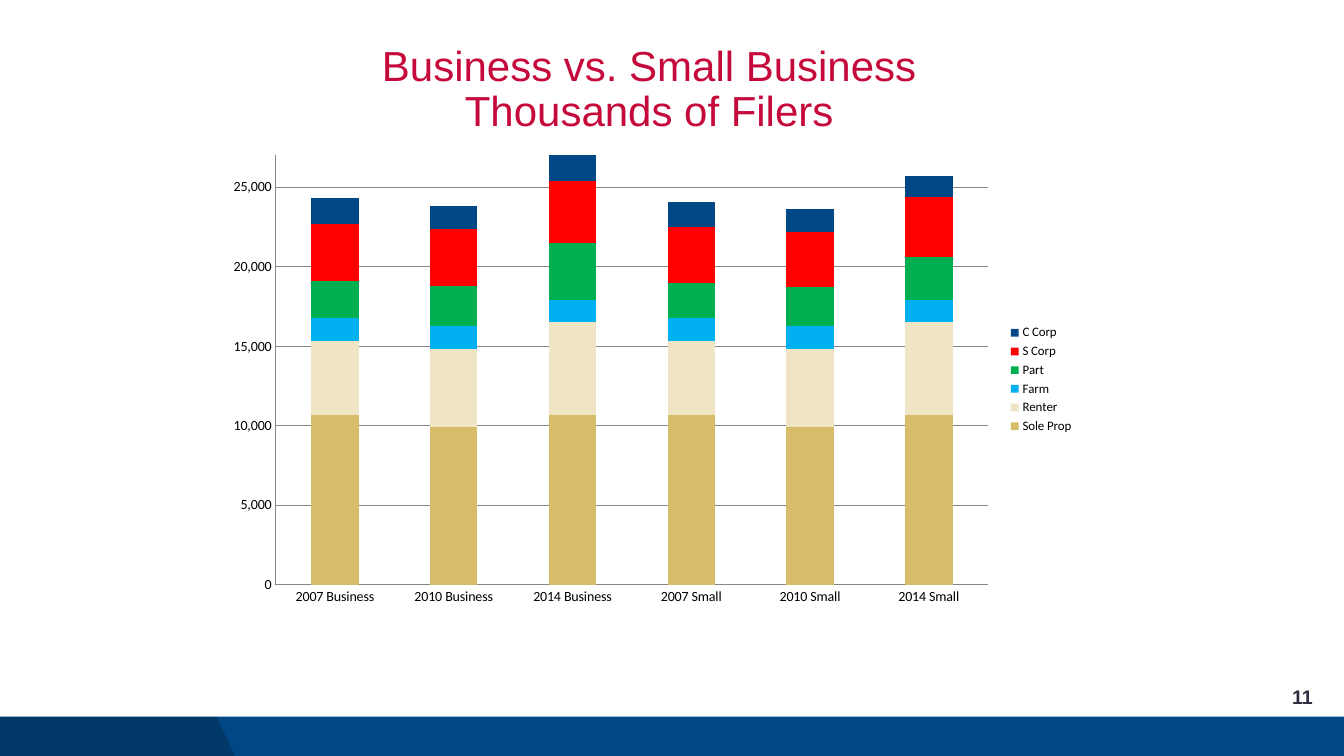
from dataclasses import dataclass

from lxml import etree
from pptx import Presentation
from pptx.chart.data import CategoryChartData
from pptx.dml.color import RGBColor
from pptx.enum.chart import XL_CHART_TYPE, XL_LEGEND_POSITION, XL_TICK_MARK
from pptx.enum.shapes import MSO_SHAPE
from pptx.enum.text import MSO_ANCHOR, MSO_AUTO_SIZE, PP_ALIGN
from pptx.oxml import parse_xml
from pptx.oxml.ns import nsdecls, qn
from pptx.util import Inches, Pt

STACKED = XL_CHART_TYPE.COLUMN_STACKED
RIGHT_LEGEND = XL_LEGEND_POSITION.RIGHT
NO_TICK = XL_TICK_MARK.NONE
RECT = MSO_SHAPE.RECTANGLE
TOP, MIDDLE = MSO_ANCHOR.TOP, MSO_ANCHOR.MIDDLE
NO_FIT = MSO_AUTO_SIZE.NONE
CENTER, RIGHT = PP_ALIGN.CENTER, PP_ALIGN.RIGHT


@dataclass(frozen=True)
class Theme:
    head: str = "Arial"
    body: str = "Calibri"
    red: str = "C5093B"
    navy: str = "004785"
    ink: str = "2D2C41"
    black: str = "000000"
    grid: str = "868686"
    title: float = 30
    number: float = 14
    label: float = 10
    legend: float = 9.2


THEME = Theme()
WIDTH, HEIGHT = 13.33, 7.5
GROUPS = ["2007 Business", "2010 Business", "2014 Business",
          "2007 Small", "2010 Small", "2014 Small"]
FILERS = [
    ("Sole Prop", "D7BC6A", [10700, 9900, 10700, 10700, 9900, 10700]),
    ("Renter", "EFE4C3", [4600, 4900, 5800, 4600, 4900, 5800]),
    ("Farm", "00B0F0", [1500, 1500, 1400, 1500, 1500, 1400]),
    ("Part", "00B050", [2300, 2500, 3600, 2200, 2400, 2700]),
    ("S Corp", "FF0000", [3600, 3600, 3900, 3500, 3500, 3800]),
    ("C Corp", THEME.navy, [1600, 1400, 1600, 1600, 1400, 1300]),
]


def rgb(code):
    return RGBColor.from_string(code)


def assign(target, values):
    for name, value in values.items():
        setattr(target, name, value)


def style(font, face, size, color, bold=False):
    assign(font, {"name": face, "size": Pt(size), "bold": bold})
    font.color.rgb = rgb(color)


def paint(shape, color):
    shape.shadow.inherit = False
    shape.fill.solid()
    shape.fill.fore_color.rgb = rgb(color)
    shape.line.fill.background()


def add_band(slide, left, top, width, height):
    """Draw the footer bar with its darker slanted end."""
    bar = slide.shapes.add_shape(
        RECT, *map(Inches, (left, top, width, height)))
    paint(bar, THEME.navy)
    base = top + height
    edge = [(left + 2.15, top), (left + 2.33, base), (left, base)]
    form = slide.shapes.build_freeform(Inches(left), Inches(top))
    form.add_line_segments([(Inches(x), Inches(y)) for x, y in edge])
    slant = form.convert_to_shape()
    paint(slant, THEME.black)
    tint = slant.fill.fore_color._xFill.find(qn("a:srgbClr"))
    etree.SubElement(tint, qn("a:alpha")).set("val", "20000")


def add_title(slide, left, top, width, height):
    title = slide.shapes.title
    assign(title, {"left": Inches(left), "top": Inches(top),
                   "width": Inches(width), "height": Inches(height)})
    frame = title.text_frame
    assign(frame, {"margin_left": 0, "margin_right": 0, "word_wrap": True,
                   "vertical_anchor": TOP, "auto_size": NO_FIT})
    frame.text = "Business vs. Small Business\vThousands of Filers"
    line = frame.paragraphs[0]
    assign(line, {"alignment": CENTER, "line_spacing": 0.9})
    style(line.font, THEME.head, THEME.title, THEME.red)


def add_number(slide, left, top, width, height):
    box = slide.shapes.add_textbox(
        *map(Inches, (left, top, width, height)))
    frame = box.text_frame
    assign(frame, {"word_wrap": True, "vertical_anchor": MIDDLE})
    line = frame.paragraphs[0]
    line.text = "11"
    line.alignment = RIGHT
    style(line.font, THEME.head, THEME.number, THEME.ink, True)


def place_plot(chart, left, top, width, height):
    """Fix the inner plot area, in fractions of the chart."""
    area = chart._chartSpace.chart.plotArea
    for old in area.findall(qn("c:layout")):
        area.remove(old)
    parts = {"xMode": "edge", "yMode": "edge",
             "x": left, "y": top, "w": width, "h": height}
    marks = "".join(f'<c:{key} val="{val}"/>' for key, val in parts.items())
    area.insert(0, parse_xml(
        f'<c:layout {nsdecls("c")}><c:manualLayout>'
        f'<c:layoutTarget val="inner"/>{marks}'
        '</c:manualLayout></c:layout>'))


def add_filers(slide, left, top, width, height):
    data = CategoryChartData(number_format="#,##0")
    data.categories = GROUPS
    for name, _, values in FILERS:
        data.add_series(name, values)
    frame = slide.shapes.add_chart(
        STACKED, *map(Inches, (left, top, width, height)), data)
    chart = frame.chart
    assign(chart, {"has_title": False, "has_legend": True})
    style(chart.font, THEME.body, THEME.label, THEME.black)
    place_plot(chart, 0.07, 0.02, 0.82, 0.92)

    plot = chart.plots[0]
    assign(plot, {"gap_width": 150, "overlap": 100,
                  "vary_by_categories": False})
    for series, (_, color, _) in zip(plot.series, FILERS):
        series.format.fill.solid()
        series.format.fill.fore_color.rgb = rgb(color)

    values = chart.value_axis
    assign(values, {"minimum_scale": 0, "maximum_scale": 27000,
                    "major_unit": 5000, "has_major_gridlines": True})
    assign(values.tick_labels, {"number_format": "#,##0",
                                "number_format_is_linked": False})
    for axis in (chart.category_axis, values):
        assign(axis, {"major_tick_mark": NO_TICK, "minor_tick_mark": NO_TICK})
        style(axis.tick_labels.font, THEME.body, THEME.label, THEME.black)
    for rule in (chart.category_axis, values, values.major_gridlines):
        rule.format.line.color.rgb = rgb(THEME.grid)
        rule.format.line.width = Pt(0.75)

    legend = chart.legend
    assign(legend, {"position": RIGHT_LEGEND, "include_in_layout": False})
    style(legend.font, THEME.body, THEME.legend, THEME.black)


def main():
    deck = Presentation()
    assign(deck, {"slide_width": Inches(WIDTH),
                  "slide_height": Inches(HEIGHT)})
    slide = deck.slides.add_slide(deck.slide_layouts.get_by_name("Title Only"))
    left, width = 2.13, 8.62
    add_band(slide, 0, 7.11, WIDTH, HEIGHT - 7.11)
    add_title(slide, left, 0.4, width, 1.01)
    add_number(slide, 10.12, 6.71, 3, 0.4)
    add_filers(slide, left, 1.45, width, 4.63)
    deck.save("out.pptx")


if __name__ == "__main__":
    main()
